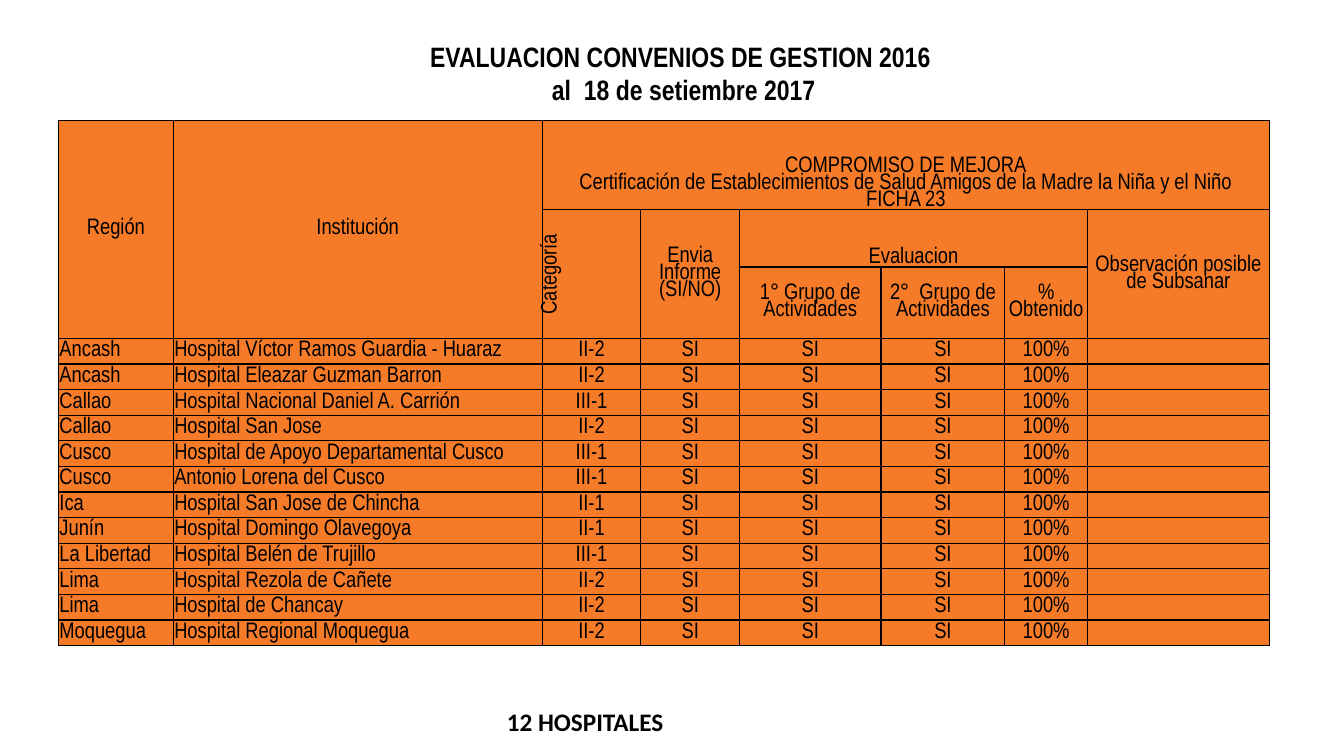
from pptx import Presentation
from pptx.dml.color import RGBColor
from pptx.enum.text import MSO_ANCHOR as Anchor, PP_ALIGN as Align
from pptx.oxml import parse_xml
from pptx.oxml.ns import nsdecls
from pptx.util import Pt

BLACK, ORANGE = "000000", "F57B28"
NARROW = "Arial Narrow"
WIDTHS = [82, 263.5, 70.5, 70.5, 101, 88.5, 59, 130]
HEADS = [64, 41, 51]
ROW = 18.3

# row, column, rows spanned, columns spanned, text, anchor
HEADERS = [
    (0, 0, 3, 1, "Región", Anchor.MIDDLE),
    (0, 1, 3, 1, "Institución", Anchor.MIDDLE),
    (0, 2, 1, 6, "COMPROMISO DE MEJORA\vCertificación de Establecimientos de Salud "
                 "Amigos de la Madre la Niña y el Niño\vFICHA 23", Anchor.BOTTOM),
    (1, 2, 2, 1, "Categoría", Anchor.MIDDLE),
    (1, 3, 2, 1, "Envia Informe\v(SI/NO)", Anchor.MIDDLE),
    (1, 4, 1, 3, "Evaluacion", Anchor.BOTTOM),
    (1, 7, 2, 1, "Observación posible de Subsanar", Anchor.MIDDLE),
    (2, 4, 1, 1, "1° Grupo de Actividades", Anchor.MIDDLE),
    (2, 5, 1, 1, "2°  Grupo de Actividades", Anchor.MIDDLE),
    (2, 6, 1, 1, "% Obtenido", Anchor.MIDDLE),
]
HOSPITALS = [
    ("Ancash", "Hospital Víctor Ramos Guardia - Huaraz", "II-2"),
    ("Ancash", "Hospital Eleazar Guzman Barron", "II-2"),
    ("Callao", "Hospital Nacional Daniel A. Carrión", "III-1"),
    ("Callao", "Hospital San Jose", "II-2"),
    ("Cusco", "Hospital de Apoyo Departamental Cusco", "III-1"),
    ("Cusco", "Antonio Lorena del Cusco", "III-1"),
    ("Ica", "Hospital San Jose de Chincha", "II-1"),
    ("Junín", "Hospital Domingo Olavegoya", "II-1"),
    ("La Libertad", "Hospital Belén de Trujillo", "III-1"),
    ("Lima", "Hospital Rezola de Cañete", "II-2"),
    ("Lima", "Hospital de Chancay", "II-2"),
    ("Moquegua", "Hospital Regional Moquegua", "II-2"),
]
RESULT = ("SI", "SI", "SI", "100%", "")


def paint(color, value):
    color.rgb = RGBColor.from_string(value)


def style(frame, font, size, bold=False, align=Align.CENTER, space=1.0):
    for para in frame.paragraphs:
        para.alignment = align
        para.line_spacing = space
        para.font.name = font
        para.font.size = Pt(size)
        para.font.bold = bold
        paint(para.font.color, BLACK)


def frame_cell(cell):
    """Give the cell its fill and a thin border on every side."""
    props = cell._tc.get_or_add_tcPr()
    for side in ("lnL", "lnR", "lnT", "lnB"):
        props.append(parse_xml(
            f'<a:{side} {nsdecls("a")} w="{Pt(1)}"><a:solidFill>'
            f'<a:srgbClr val="{BLACK}"/></a:solidFill></a:{side}>'))
    cell.fill.solid()
    paint(cell.fill.fore_color, ORANGE)


def write(cell, text, align=Align.CENTER, anchor=Anchor.MIDDLE):
    cell.text = text
    cell.vertical_anchor = anchor
    cell.margin_left = cell.margin_right = cell.margin_top = Pt(0.7)
    cell.margin_bottom = Pt(0)
    style(cell.text_frame, NARROW, 16, align=align, space=0.8)


def add_grid(slide):
    heights = HEADS + [ROW] * len(HOSPITALS)
    table = slide.shapes.add_table(
        len(heights), len(WIDTHS), Pt(41.8), Pt(85.8),
        Pt(sum(WIDTHS)), Pt(sum(heights))).table
    table.first_row = table.horz_banding = False
    for col, width in zip(table.columns, WIDTHS):
        col.width = Pt(width)
    for row, height in zip(table.rows, heights):
        row.height = Pt(height)
    for cell in table.iter_cells():
        frame_cell(cell)
    for top, left, down, over, text, anchor in HEADERS:
        cell = table.cell(top, left)
        if down * over > 1:
            cell.merge(table.cell(top + down - 1, left + over - 1))
        write(cell, text, anchor=anchor)
    table.cell(1, 2)._tc.get_or_add_tcPr().set("vert", "vert270")
    for r, facts in enumerate(HOSPITALS, len(HEADS)):
        for c, text in enumerate(facts + RESULT):
            write(table.cell(r, c), text, Align.LEFT if c < 2 else Align.CENTER)


def add_title(slide):
    title = slide.shapes.title
    title.left, title.top = Pt(196.6), Pt(24.5)
    title.width, title.height = Pt(578.9), Pt(55.4)
    frame = title.text_frame
    frame.text = "EVALUACION CONVENIOS DE GESTION 2016\n al  18 de setiembre 2017"
    frame.vertical_anchor = Anchor.TOP
    style(frame, NARROW, 20, bold=True)


def add_total(slide):
    box = slide.shapes.add_textbox(Pt(299.5), Pt(501), Pt(236.9), Pt(29.5))
    frame = box.text_frame
    frame.word_wrap = True
    frame.text = f"{len(HOSPITALS)} HOSPITALES"
    style(frame, "Calibri", 18, bold=True)


def main():
    deck = Presentation()
    deck.slide_width, deck.slide_height = Pt(960), Pt(540)
    slide = deck.slides.add_slide(deck.slide_layouts[5])
    add_grid(slide)
    add_title(slide)
    add_total(slide)
    deck.save("out.pptx")


if __name__ == "__main__":
    main()
